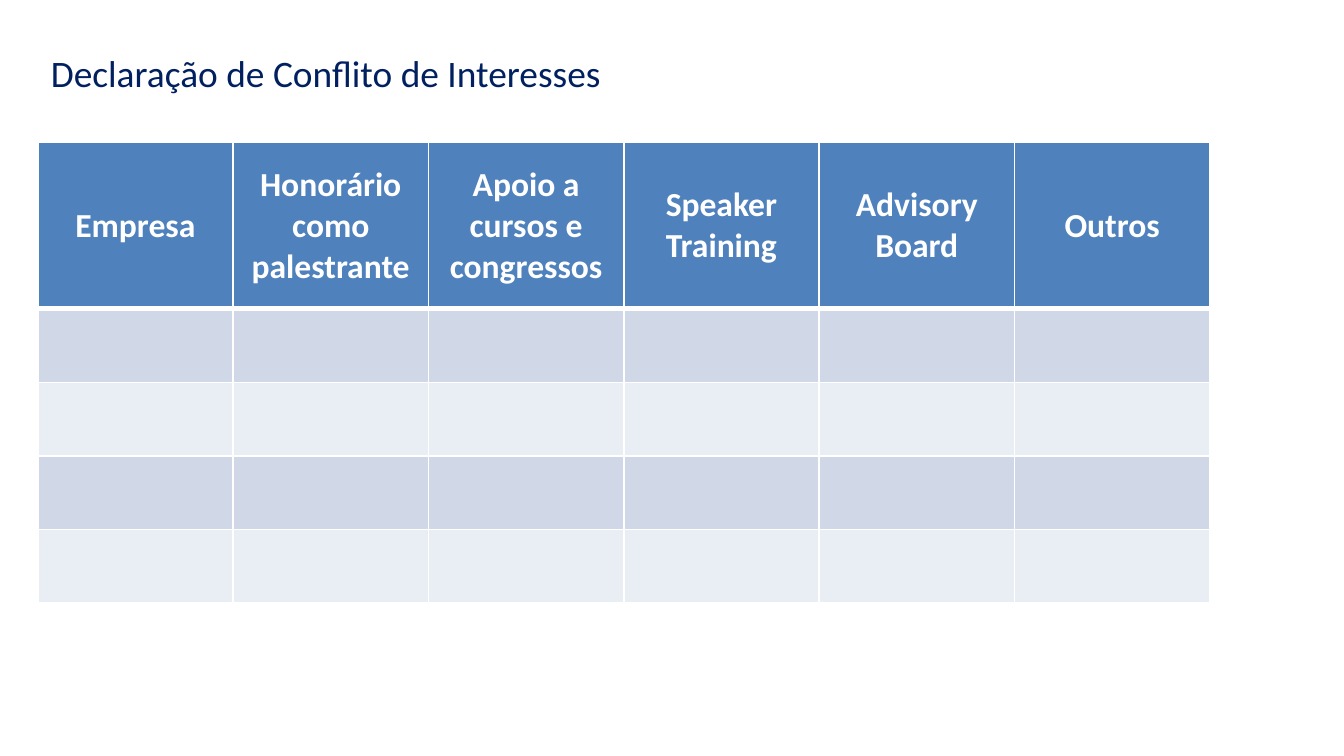
import dataclasses

import pptx
import pptx.dml.color
import pptx.enum.text
import pptx.oxml
import pptx.oxml.ns
import pptx.util

Pt = pptx.util.Pt
RGB = pptx.dml.color.RGBColor.from_string
ALIGN = pptx.enum.text.PP_ALIGN
MIDDLE = pptx.enum.text.MSO_ANCHOR.MIDDLE


@dataclasses.dataclass(frozen=True)
class Theme:
    font: str = "Calibri"
    title_size: float = 20
    header_size: float = 18
    title: str = "002060"
    header: str = "4F81BD"
    header_text: str = "FFFFFF"
    bands: tuple = ("D0D8E8", "E9EDF4")
    border: str = "FFFFFF"
    thin: float = 1
    thick: float = 3


def write(tf, text, font, size, color, bold=False, align=ALIGN.LEFT):
    p = tf.paragraphs[0]
    p.alignment = align
    r = p.add_run()
    r.text = text
    r.font.name = font
    r.font.size = Pt(size)
    r.font.bold = bold
    r.font.color.rgb = RGB(color)


class SlideBuilder:
    """Draws styled elements on the current slide."""

    def __init__(self, s, theme):
        self.s = s
        self.theme = theme

    def title(self, text, left, top, width, height):
        t = self.theme
        sp = self.s.shapes.title
        sp.left, sp.top, sp.width, sp.height = map(Pt, (left, top, width, height))
        tf = sp.text_frame
        tf.word_wrap = True
        tf.vertical_anchor = MIDDLE
        write(tf, text, t.font, t.title_size, t.title)

    def borders(self, cell, **widths):
        tc_pr = cell._tc.get_or_add_tcPr()
        for side in "LRTB":
            width = Pt(widths.get(side, self.theme.thin))
            tc_pr.append(pptx.oxml.parse_xml(
                f'<a:ln{side} {pptx.oxml.ns.nsdecls("a")} w="{width}"><a:solidFill>'
                f'<a:srgbClr val="{self.theme.border}"/></a:solidFill></a:ln{side}>'))

    def fill(self, cell, color):
        cell.fill.solid()
        cell.fill.fore_color.rgb = RGB(color)

    def table(self, headers, left, top, width, header_height, row_height, body_rows):
        t = self.theme
        height = header_height + body_rows * row_height
        table = self.s.shapes.add_table(
            body_rows + 1, len(headers), Pt(left), Pt(top), Pt(width), Pt(height)).table
        for column in table.columns:
            column.width = Pt(width / len(headers))
        for i, row in enumerate(table.rows):
            row.height = Pt(row_height if i else header_height)
            for cell, text in zip(row.cells, headers):
                if i:
                    self.borders(cell, T=t.thick if i == 1 else t.thin)
                    self.fill(cell, t.bands[(i - 1) % 2])
                else:
                    self.borders(cell, B=t.thick)
                    self.fill(cell, t.header)
                    cell.vertical_anchor = MIDDLE
                    write(cell.text_frame, text, t.font, t.header_size,
                          t.header_text, bold=True, align=ALIGN.CENTER)


def main():
    prs = pptx.Presentation()
    prs.slide_width, prs.slide_height = Pt(720), Pt(405)
    s = prs.slides.add_slide(prs.slide_layouts[5])
    builder = SlideBuilder(s, Theme())
    builder.title("Declaração de Conflito de Interesses", 20, 22.5, 622, 32.5)
    headers = ("Empresa", "Honorário como palestrante", "Apoio a cursos e congressos",
               "Speaker Training", "Advisory Board", "Outros")
    builder.table(headers, 20.2, 76.3, 628, header_height=89.2, row_height=39.4, body_rows=4)
    prs.save("out.pptx")


if __name__ == "__main__":
    main()
